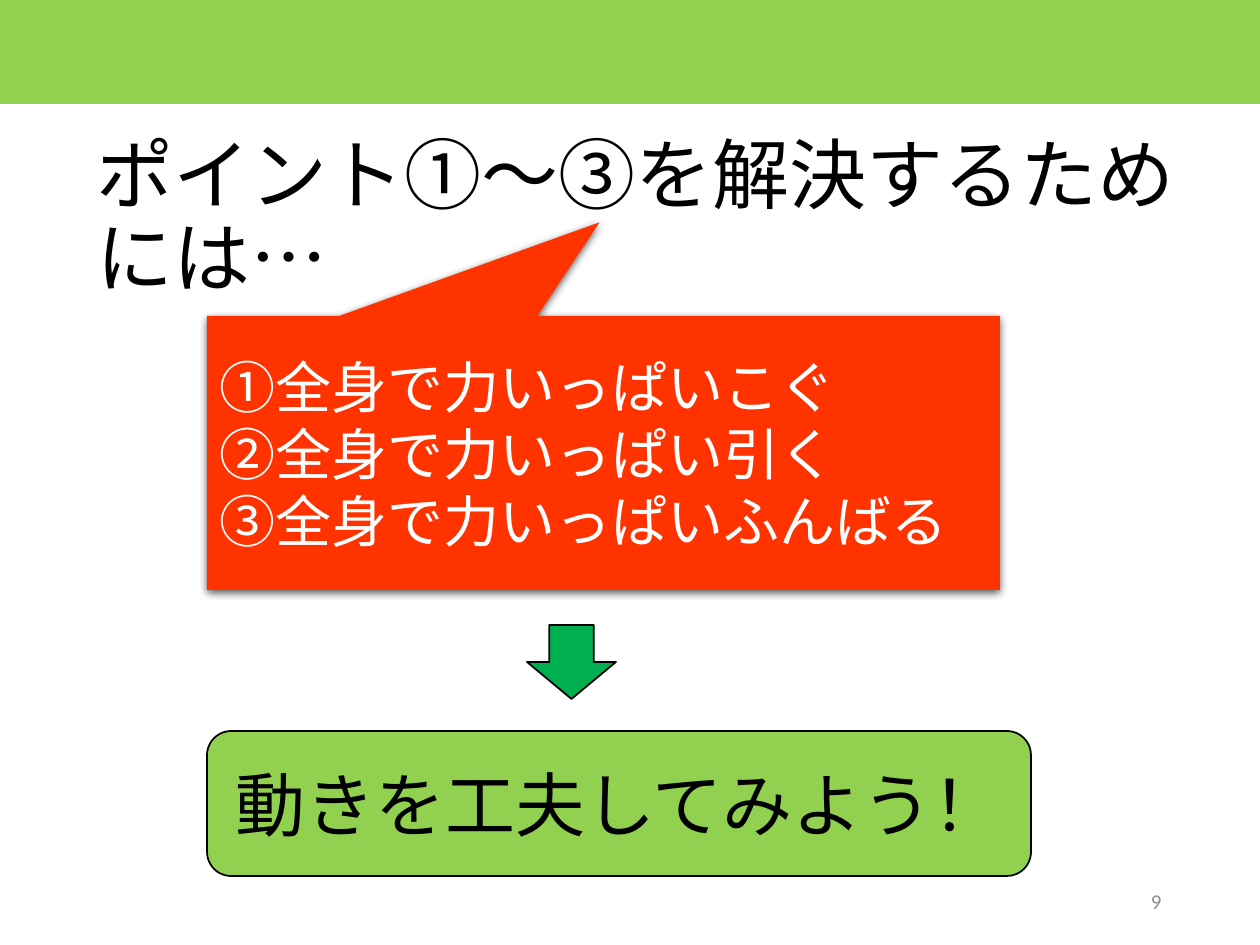
from lxml.etree import SubElement
from pptx import Presentation
from pptx.dml.color import RGBColor
from pptx.enum.shapes import MSO_SHAPE as Shape
from pptx.enum.text import MSO_ANCHOR as Anchor, MSO_AUTO_SIZE as AutoSize, PP_ALIGN as Align
from pptx.oxml.ns import qn
from pptx.util import Emu, Pt

FONT = "Calibri"
COLORS = {
    "lime": "92D050",
    "red": "FF3300",
    "green": "00B050",
    "black": "000000",
    "white": "FFFFFF",
    "gray": "8C8C8C",
}
STEPS = ["①全身で力いっぱいこぐ", "②全身で力いっぱい引く", "③全身で力いっぱいふんばる"]


def px(length):
    return Emu(round(length * 914400 / 126))


def rgb(color):
    return RGBColor.from_string(COLORS[color])


def write(holder, text, size, color, align=Align.LEFT, anchor=Anchor.MIDDLE):
    frame = holder.text_frame
    frame.text = text
    frame.word_wrap = True
    frame.auto_size = AutoSize.NONE
    frame.vertical_anchor = anchor
    for paragraph in frame.paragraphs:
        paragraph.alignment = align
        for run in paragraph.runs:
            run.font.size = Pt(size)
            run.font.name = FONT
            run.font.color.rgb = rgb(color)


def add_title(slide, text, box):
    title = slide.shapes.title
    title.left, title.top, title.width, title.height = map(px, box)
    write(title, text, 44, "black", anchor=Anchor.TOP)
    title.text_frame.paragraphs[0].line_spacing = 0.9


def add_block(slide, preset, box, fill, outline=None):
    block = slide.shapes.add_shape(preset, *map(px, box))
    block.shadow.inherit = False
    block.fill.solid()
    block.fill.fore_color.rgb = rgb(fill)
    if outline:
        block.line.color.rgb = rgb(outline)
        block.line.width = Pt(1)
    else:
        block.line.fill.background()
    return block


def add_drop_shadow(block):
    effects = block._element.spPr.find(qn("a:effectLst"))
    shadow = SubElement(effects, qn("a:outerShdw"), blurRad=str(Pt(4.5)),
                        dist=str(Pt(1.5)), dir="5400000", rotWithShape="0")
    shade = SubElement(shadow, qn("a:srgbClr"), val=COLORS["black"])
    SubElement(shade, qn("a:alpha"), val="63000")


def add_page_number(slide, number, box):
    page_number = slide.shapes.add_textbox(*map(px, box))
    write(page_number, number, 12, "gray", Align.RIGHT)


def main():
    """Build the slide that leads from three points to a call to action."""
    deck = Presentation()
    deck.slide_width, deck.slide_height = px(1260), px(945)
    slide = deck.slides.add_slide(deck.slide_layouts[5])

    add_page_number(slide, "9", (890, 876, 284, 50))
    add_block(slide, Shape.RECTANGLE, (-2, 0, 1262, 104), "lime")
    add_title(slide, "ポイント①～③を解決するためには…", (84, 131, 1150, 93))

    callout = add_block(slide, Shape.RECTANGULAR_CALLOUT, (207, 316, 793, 274), "red")
    callout.adjustments[0], callout.adjustments[1] = -0.005, -0.842
    add_drop_shadow(callout)
    write(callout, "\n".join(STEPS), 32, "white")

    add_block(slide, Shape.DOWN_ARROW, (527, 625, 89, 74), "green", "black")
    appeal = add_block(slide, Shape.ROUNDED_RECTANGLE, (207, 731, 824, 145), "lime", "black")
    write(appeal, "動きを工夫してみよう！", 40, "black", Align.CENTER)

    deck.save("out.pptx")


if __name__ == "__main__":
    main()
